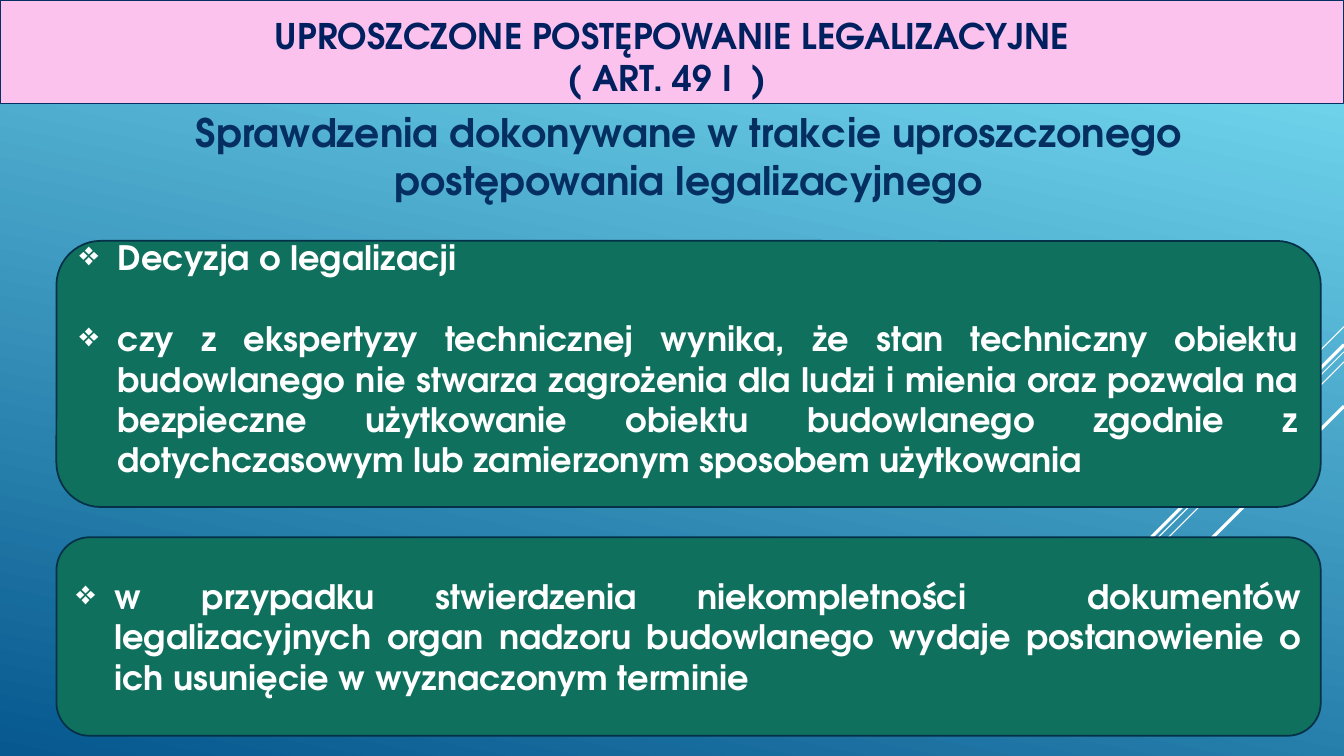
from lxml import etree
from pptx import Presentation, util as u
from pptx.dml.color import RGBColor
from pptx.enum import shapes as s, text as t
from pptx.oxml import ns

FONT = "TeX Gyre Adventor"
LEFT, WIDE = 0.56, 12.54


def tint(code):
    return RGBColor.from_string(code)


def write(shape, *lines, size=24, color="FFFFFF", align="CENTER",
          anchor="MIDDLE", bullet=None, gap=0):
    frame = shape.text_frame
    frame.word_wrap = True
    frame.auto_size = t.MSO_AUTO_SIZE.NONE
    frame.vertical_anchor = t.MSO_ANCHOR[anchor]
    for i, line in enumerate(lines):
        para = frame.add_paragraph() if i else frame.paragraphs[0]
        para.text = line
        para.alignment = t.PP_ALIGN[align]
        para.line_spacing = 1.0
        para.space_before = u.Pt(gap if i else 0)
        for run in para.runs:
            font = run.font
            font.name, font.size, font.bold = FONT, u.Pt(size), True
            font.color.rgb = tint(color)
        if bullet:
            props = para._p.get_or_add_pPr()
            props.set("marL", str(u.Inches(0.38)))
            props.set("indent", str(-u.Inches(0.38)))
            etree.SubElement(props, ns.qn("a:buChar"), char=bullet)


deck = Presentation()
deck.slide_width, deck.slide_height = u.Inches(13.33), u.Inches(7.5)
slide = deck.slides.add_slide(deck.slide_layouts[5])

# Background
back = slide.background.fill
back.gradient()
back.gradient_angle = 258
for stop, (place, code) in zip(back.gradient_stops,
                               [(0.1, "6ED2EB"), (1, "06588E")]):
    stop.position, stop.color.rgb = place, tint(code)

# Diagonal rays from the right edge: top, run, weight
for top, run, weight in [(3.24, 1, 0.75), (3.49, 3.26, 0.75),
                         (3.59, 2.07, 0.75), (3.42, 1.91, 2.25),
                         (4.03, 1.39, 2.25)]:
    ray = slide.shapes.add_connector(
        s.MSO_CONNECTOR.STRAIGHT, u.Inches(13.33), u.Inches(top),
        u.Inches(13.33 - run), u.Inches(top + run))
    ray.line.color.rgb = tint("FFFFFF")
    ray.line.width = u.Pt(weight)
    etree.SubElement(ray._element.spPr, ns.qn("a:effectLst"))

# Title band
title = slide.shapes.title
title.left, title.top = 0, 0
title.width, title.height = deck.slide_width, u.Inches(1.03)
title.fill.solid()
title.fill.fore_color.rgb = tint("FAC2ED")
title.line.color.rgb = tint("052F61")
title.line.width = u.Pt(0.75)
write(title, "UPROSZCZONE POSTĘPOWANIE LEGALIZACYJNE\v( ART. 49 I  ) ",
      size=25.2, color="002060", anchor="BOTTOM")

# Subtitle
head = slide.shapes.add_textbox(u.Inches(LEFT), u.Inches(1.03),
                                u.Inches(WIDE), u.Inches(1.1))
write(head, "Sprawdzenia dokonywane w trakcie uproszczonego "
      "postępowania legalizacyjnego", size=28, color="052F61", anchor="TOP")

# Green panels: top, height, bottom inset, points
panels = [
    (2.39, 2.64, 0.31, [
        "Decyzja o legalizacji",
        "czy z ekspertyzy technicznej wynika, że stan techniczny obiektu "
        "budowlanego nie stwarza zagrożenia dla ludzi i mienia oraz pozwala "
        "na bezpieczne użytkowanie obiektu budowlanego zgodnie z "
        "dotychczasowym lub zamierzonym sposobem użytkowania"]),
    (5.33, 1.97, 0, [
        "w przypadku stwierdzenia niekompletności  dokumentów "
        "legalizacyjnych organ nadzoru budowlanego wydaje postanowienie o "
        "ich usunięcie w wyznaczonym terminie"]),
]
for top, high, inset, points in panels:
    panel = slide.shapes.add_shape(
        s.MSO_SHAPE.ROUNDED_RECTANGLE, u.Inches(LEFT), u.Inches(top),
        u.Inches(WIDE), u.Inches(high))
    panel.shadow.inherit = False
    panel.fill.solid()
    panel.fill.fore_color.rgb = tint("0F705D")
    panel.line.color.rgb = tint("043148")
    panel.line.width = u.Pt(1.25)
    panel.text_frame.margin_top = 0
    panel.text_frame.margin_bottom = u.Inches(inset)
    write(panel, *points, align="JUSTIFY", bullet="❖", gap=29)

deck.save("out.pptx")
